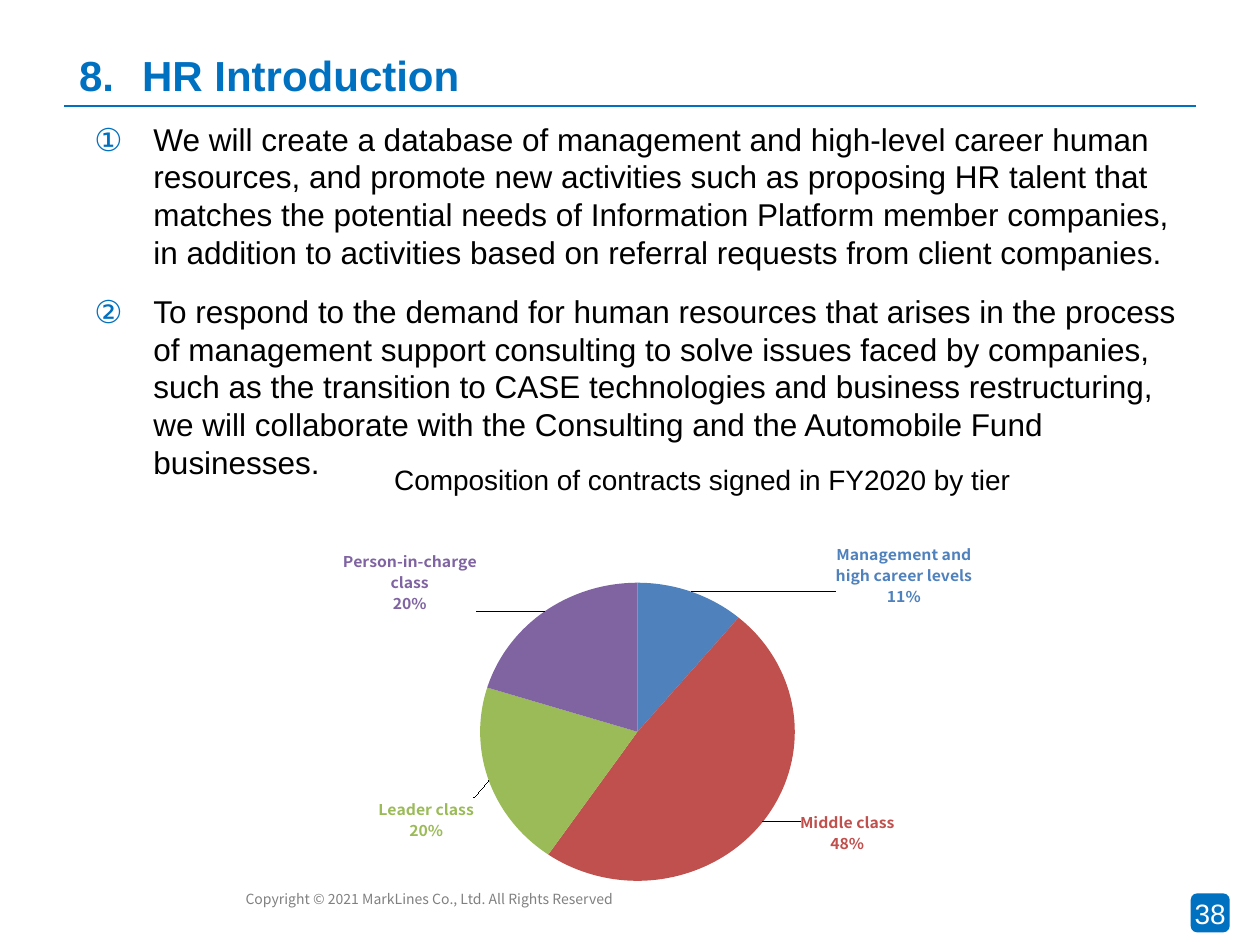
from lxml import etree
from pptx import Presentation
from pptx.chart.data import CategoryChartData
from pptx.dml.color import RGBColor
from pptx.enum.chart import XL_CHART_TYPE, XL_LABEL_POSITION
from pptx.enum.shapes import MSO_CONNECTOR, MSO_SHAPE
from pptx.enum.text import MSO_ANCHOR, PP_ALIGN
from pptx.oxml.ns import qn
from pptx.util import Inches, Pt

COLORS = {
    "accent": "0070C0", "text": "000000", "footer": "808080", "white": "FFFFFF",
    "management": "4F81BD", "middle": "C0504D", "leader": "9BBB59", "person": "8064A2",
}


def write(frame, paragraphs, size, color, font="Arial", bold=False, wrap=True,
          anchor=MSO_ANCHOR.TOP, numbering=None, indent=0, space_after=0):
    """Fill a text frame; numbering holds the attributes of a:buAutoNum."""
    frame.word_wrap = wrap
    frame.vertical_anchor = anchor
    for i, text in enumerate(paragraphs):
        paragraph = frame.paragraphs[0] if i == 0 else frame.add_paragraph()
        if numbering:
            props = paragraph._p.get_or_add_pPr()
            props.set("marL", str(Inches(indent)))
            props.set("indent", str(-Inches(indent)))
            bullet_color = etree.SubElement(props, qn("a:buClr"))
            etree.SubElement(bullet_color, qn("a:srgbClr"), val=COLORS["accent"])
            etree.SubElement(props, qn("a:buFont"), typeface="+mj-lt")
            etree.SubElement(props, qn("a:buAutoNum"), **numbering)
        paragraph.space_after = Pt(space_after)
        run = paragraph.add_run()
        run.text = text
        style(run.font, size, color, font, bold)


def style(font, size, color, name, bold=False):
    for key, value in {"size": Pt(size), "name": name, "bold": bold}.items():
        setattr(font, key, value)
    font.color.rgb = RGBColor.from_string(COLORS[color])


prs = Presentation()
prs.slide_width, prs.slide_height = Inches(10), Inches(7.5)
slide = prs.slides.add_slide(prs.slide_layouts[6])
shapes = slide.shapes

# Footer, title rule and page number
footer = shapes.add_textbox(Inches(1.85), Inches(7.02), Inches(3.78), Inches(0.24))
write(footer.text_frame, ["Copyright © 2021 MarkLines Co., Ltd. All Rights Reserved"],
      8, "footer", font="Noto Sans CJK JP")

rule = shapes.add_connector(MSO_CONNECTOR.STRAIGHT, Inches(0.51), Inches(0.84),
                            Inches(9.49), Inches(0.84))
rule.line.color.rgb = RGBColor.from_string(COLORS["accent"])
rule.line.width = Pt(1)
etree.SubElement(rule._element.spPr, qn("a:effectLst"))

page = shapes.add_shape(MSO_SHAPE.ROUNDED_RECTANGLE, Inches(9.45), Inches(7.09),
                        Inches(0.31), Inches(0.31))
page.shadow.inherit = False
page.fill.solid()
page.fill.fore_color.rgb = RGBColor.from_string(COLORS["accent"])
page.line.fill.background()
write(page.text_frame, ["38"], 16, "white", wrap=False, anchor=MSO_ANCHOR.MIDDLE)
page.text_frame.paragraphs[0].alignment = PP_ALIGN.CENTER

# Title and numbered points
title = shapes.add_textbox(Inches(0.53), Inches(0.36), Inches(3.96), Inches(0.46))
write(title.text_frame, ["HR Introduction"], 24, "accent", bold=True,
      anchor=MSO_ANCHOR.MIDDLE, indent=0.5,
      numbering={"type": "arabicPeriod", "startAt": "8"})

points = [
    "We will create a database of management and high-level career human resources, "
    "and promote new activities such as proposing HR talent that matches the potential "
    "needs of Information Platform member companies, in addition to activities based on "
    "referral requests from client companies.",
    "To respond to the demand for human resources that arises in the process of "
    "management support consulting to solve issues faced by companies, such as the "
    "transition to CASE technologies and business restructuring, we will collaborate "
    "with the Consulting and the Automobile Fund businesses.",
]
body = shapes.add_textbox(Inches(0.65), Inches(0.9), Inches(8.84), Inches(2.36))
write(body.text_frame, points, 18, "text", indent=0.47, space_after=12,
      numbering={"type": "circleNumDbPlain"})

# Pie of contracts by tier: name, share, colour, label offset in chart fractions
tiers = [
    ("Management and high career levels", 11, "management", (0.18, 0.04)),
    ("Middle class", 48, "middle", (0.04, -0.04)),
    ("Leader class", 20, "leader", (-0.01, 0.04)),
    ("Person-in-charge class", 20, "person", (-0.08, 0.02)),
]
data = CategoryChartData()
data.categories = [tier[0] for tier in tiers]
data.add_series("Series 1", [tier[1] for tier in tiers])
chart = shapes.add_chart(XL_CHART_TYPE.PIE, Inches(1.93), Inches(4.14),
                         Inches(6.26), Inches(3.17), data).chart
chart.has_legend = False
chart.has_title = False
style(chart.font, 10, "text", "Calibri")
pie = chart.plots[0]
pie.vary_by_categories = True

plot_area = chart._chartSpace.chart.plotArea
for old in plot_area.findall(qn("c:layout")):
    plot_area.remove(old)
layout = etree.Element(qn("c:layout"))
plot_area.insert(0, layout)
manual = etree.SubElement(layout, qn("c:manualLayout"))
for tag, value in {"layoutTarget": "inner", "xMode": "edge", "yMode": "edge",
                   "x": 0.288, "y": 0.106, "w": 0.424, "h": 0.788}.items():
    etree.SubElement(manual, qn(f"c:{tag}"), val=str(value))

series = pie.series[0]
for i, (_, _, color, offset) in enumerate(tiers):
    point = series.points[i]
    point.format.fill.solid()
    point.format.fill.fore_color.rgb = RGBColor.from_string(COLORS[color])
    label = point.data_label
    style(label.font, 9, color, "Noto Sans CJK JP", bold=True)
    label.position = XL_LABEL_POSITION.OUTSIDE_END
    label_xml = series.data_labels._element.findall(qn("c:dLbl"))[i]
    label_layout = etree.Element(qn("c:layout"))
    label_xml.insert(1, label_layout)
    label_manual = etree.SubElement(label_layout, qn("c:manualLayout"))
    for tag, value in zip("xy", offset):
        etree.SubElement(label_manual, qn(f"c:{tag}"), val=str(value))
    for tag, shown in {"showVal": "0", "showCatName": "1", "showPercent": "1"}.items():
        label_xml.find(qn(f"c:{tag}")).set("val", shown)
    etree.SubElement(label_xml, qn("c:separator")).text = "\n"

labels = series.data_labels
for key, value in {"show_value": False, "show_category_name": True,
                   "show_percentage": True,
                   "position": XL_LABEL_POSITION.OUTSIDE_END}.items():
    setattr(labels, key, value)
style(labels.font, 9, "management", "Noto Sans CJK JP", bold=True)

caption = shapes.add_textbox(Inches(3.03), Inches(3.62), Inches(5.15), Inches(0.37))
write(caption.text_frame, ["Composition of contracts signed in FY2020 by tier"],
      16, "text", wrap=False)

prs.save("out.pptx")
